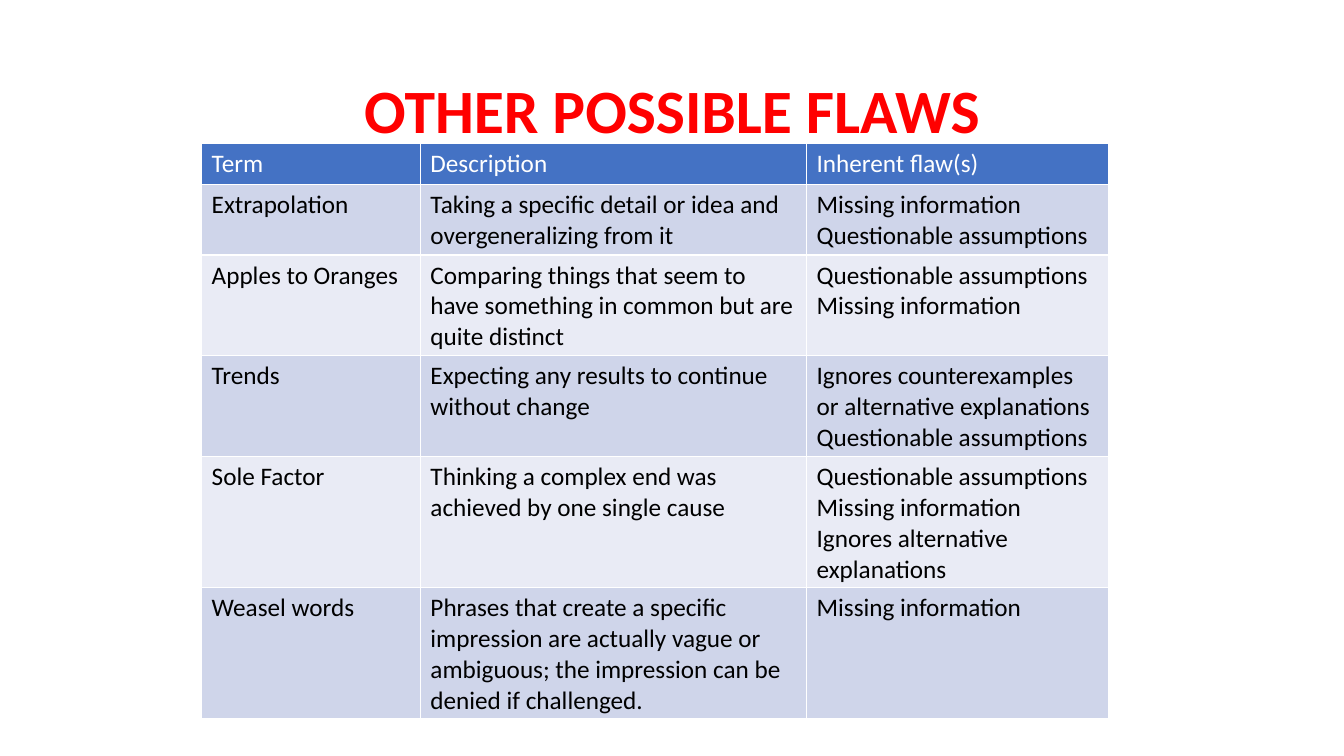
from pptx import Presentation
from pptx.dml.color import RGBColor
from pptx.enum.text import MSO_ANCHOR, PP_ALIGN
from pptx.util import Inches, Pt

FONT = "Calibri"
RED, BLUE, WHITE, BLACK = "FF0000", "4472C4", "FFFFFF", "000000"
BANDS = ["CFD5EA", "E9EBF5"]
COLUMN_WIDTHS = [2.17, 3.83, 3]
ROW_HEIGHT = 0.41

FLAWS = [
    ["Term", "Description", "Inherent flaw(s)"],
    ["Extrapolation",
     "Taking a specific detail or idea and overgeneralizing from it",
     "Missing information\nQuestionable assumptions"],
    ["Apples to Oranges",
     "Comparing things that seem to have something in common but are quite distinct",
     "Questionable assumptions\nMissing information"],
    ["Trends",
     "Expecting any results to continue without change",
     "Ignores counterexamples or alternative explanations\nQuestionable assumptions"],
    ["Sole Factor",
     "Thinking a complex end was achieved by one single cause",
     "Questionable assumptions\nMissing information\nIgnores alternative explanations"],
    ["Weasel words",
     "Phrases that create a specific impression are actually vague or ambiguous; "
     "the impression can be denied if challenged.",
     "Missing information"],
]


def rgb(value):
    return RGBColor.from_string(value)


def write(tf, text, size=18, color=BLACK, bold=False, align=PP_ALIGN.LEFT, spacing=1.0):
    tf.word_wrap = True
    for i, line in enumerate(text.split("\n")):
        p = tf.add_paragraph() if i else tf.paragraphs[0]
        p.alignment = align
        p.line_spacing = spacing
        r = p.add_run()
        r.text = line
        r.font.name = FONT
        r.font.size = Pt(size)
        r.font.bold = bold
        r.font.color.rgb = rgb(color)


def add_title(s, text, left, top, width, height):
    sp = s.shapes.add_textbox(Inches(left), Inches(top), Inches(width), Inches(height))
    sp.text_frame.vertical_anchor = MSO_ANCHOR.MIDDLE
    write(sp.text_frame, text, size=44, color=RED, bold=True,
          align=PP_ALIGN.CENTER, spacing=0.9)


def add_flaw_table(s, rows, left, top, widths):
    table = s.shapes.add_table(
        len(rows), len(widths), Inches(left), Inches(top),
        Inches(sum(widths)), Inches(ROW_HEIGHT * len(rows))).table
    for column, width in zip(table.columns, widths):
        column.width = Inches(width)
    for i, row in enumerate(rows):
        table.rows[i].height = Inches(ROW_HEIGHT)
        for j, text in enumerate(row):
            cell = table.cell(i, j)
            cell.fill.solid()
            cell.fill.fore_color.rgb = rgb(BANDS[(i - 1) % 2] if i else BLUE)
            write(cell.text_frame, text, color=BLACK if i else WHITE)


def main():
    prs = Presentation()
    prs.slide_width, prs.slide_height = Inches(13.33), Inches(7.5)
    s = prs.slides.add_slide(prs.slide_layouts[6])
    add_title(s, "OTHER POSSIBLE FLAWS", 0.92, 0.4, 11.5, 1.45)
    add_flaw_table(s, FLAWS, 2, 1.42, COLUMN_WIDTHS)
    prs.save("out.pptx")


if __name__ == "__main__":
    main()
